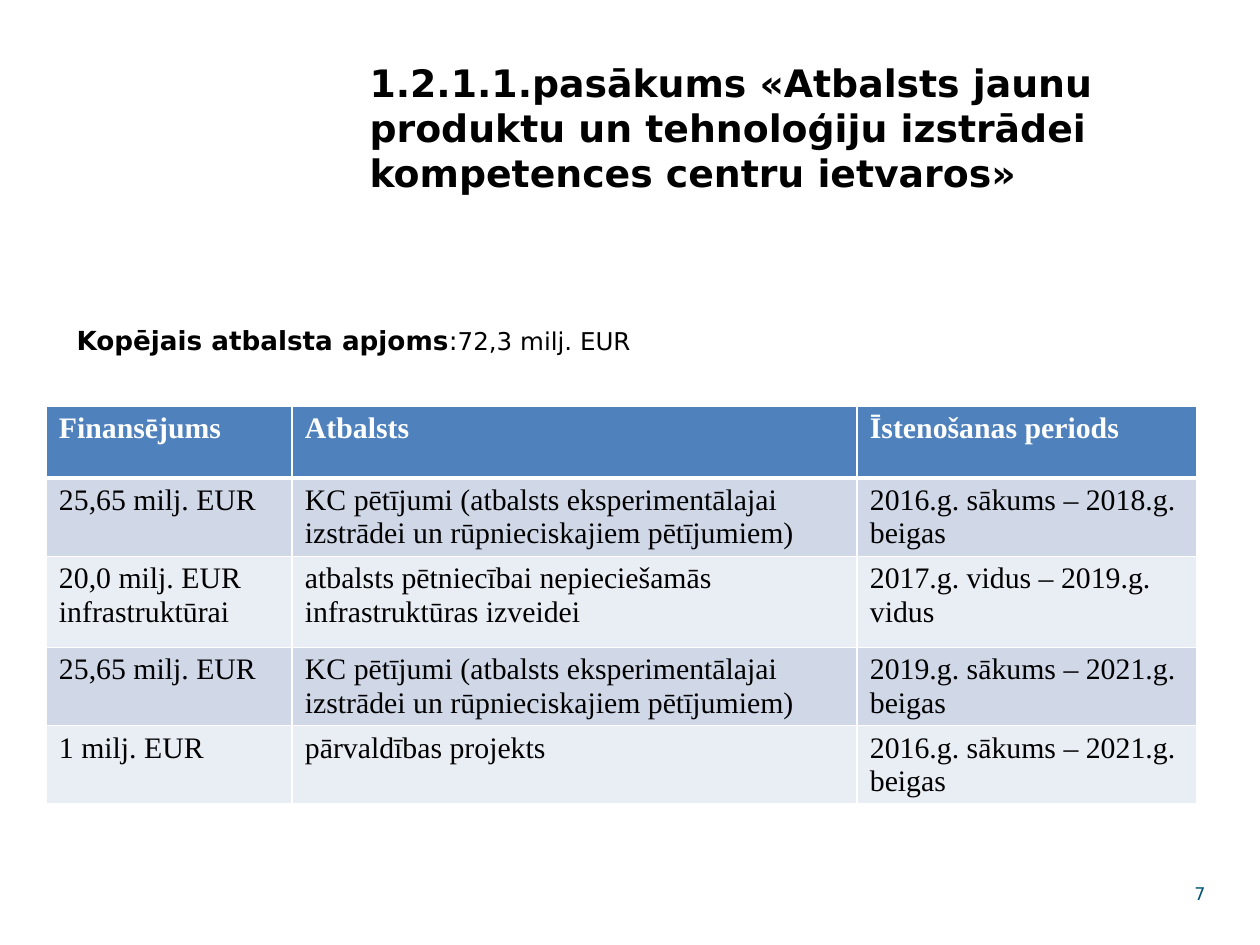
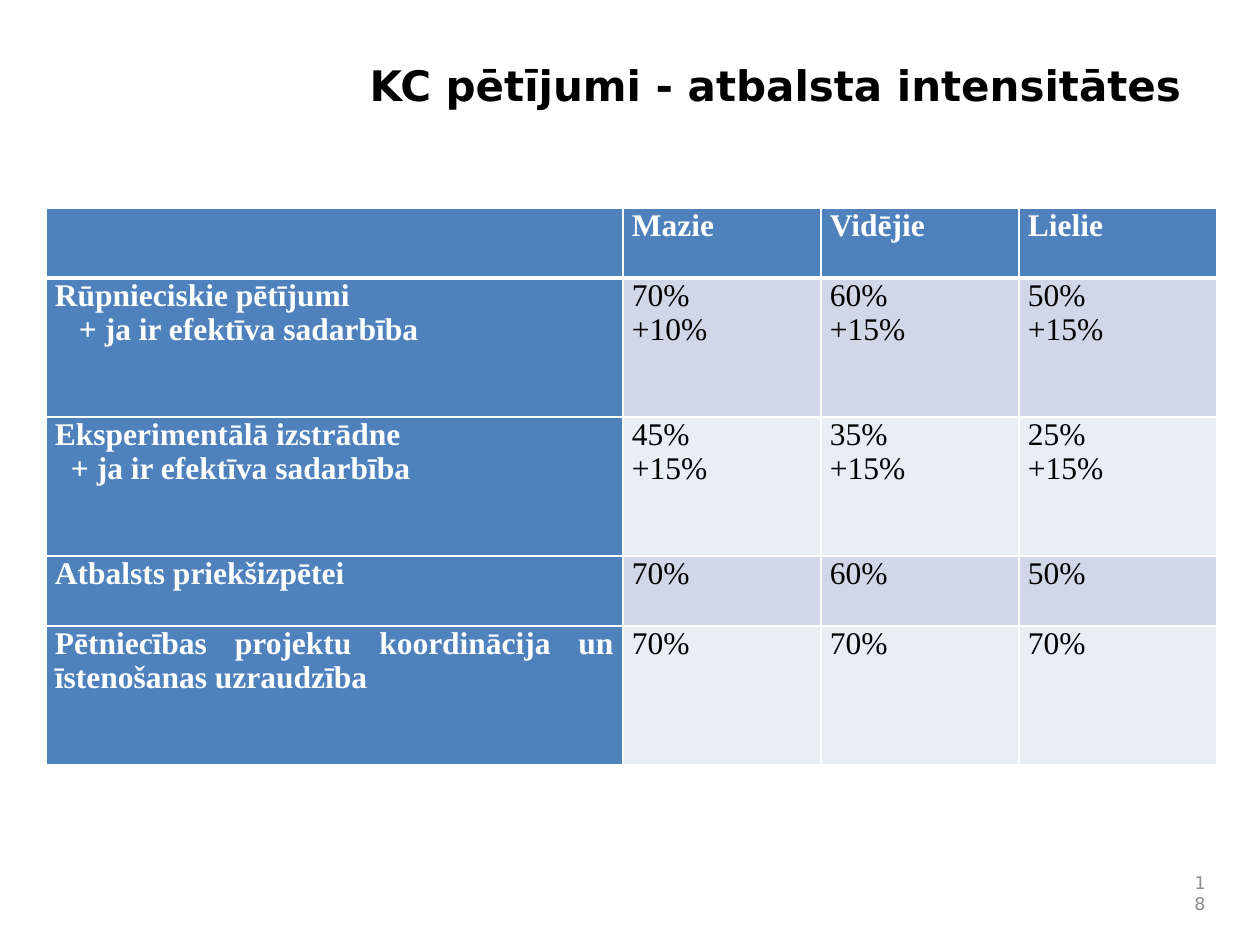
from lxml.etree import SubElement
from pptx import Presentation
from pptx.dml.color import RGBColor
from pptx.enum.text import MSO_ANCHOR as Anchor, MSO_AUTO_SIZE as AutoSize, PP_ALIGN as Align
from pptx.oxml.ns import qn
from pptx.util import Emu, Pt

PX = 914400 // 126
SANS = "DejaVu Sans"
SERIF = "Times New Roman"
BLACK = RGBColor(0x00, 0x00, 0x00)
WHITE = RGBColor(0xFF, 0xFF, 0xFF)
BLUE = RGBColor(0x4F, 0x81, 0xBD)
BAND_DARK = RGBColor(0xD0, 0xD8, 0xE8)
BAND_LIGHT = RGBColor(0xE9, 0xED, 0xF4)
TEAL = RGBColor(0x00, 0x53, 0x74)
GREY = RGBColor(0x8C, 0x8C, 0x8C)

FUNDING = [
    ["Finansējums", "Atbalsts", "Īstenošanas periods"],
    ["25,65 milj. EUR",
     "KC pētījumi (atbalsts eksperimentālajai izstrādei un rūpnieciskajiem pētījumiem)",
     "2016.g. sākums – 2018.g. beigas"],
    ["20,0 milj. EUR infrastruktūrai",
     "atbalsts pētniecībai nepieciešamās infrastruktūras izveidei",
     "2017.g. vidus – 2019.g. vidus"],
    ["25,65 milj. EUR",
     "KC pētījumi (atbalsts eksperimentālajai izstrādei un rūpnieciskajiem pētījumiem)",
     "2019.g. sākums – 2021.g. beigas"],
    ["1 milj. EUR", "pārvaldības projekts", "2016.g. sākums – 2021.g. beigas"],
]
INTENSITIES = [
    ["", "Mazie", "Vidējie", "Lielie"],
    ["Rūpnieciskie pētījumi\n+ ja ir efektīva sadarbība", "70%\n+10%", "60%\n+15%", "50%\n+15%"],
    ["Eksperimentālā izstrādne\n+ ja ir efektīva sadarbība", "45%\n+15%", "35%\n+15%", "25%\n+15%"],
    ["Atbalsts priekšizpētei", "70%", "60%", "50%"],
    ["Pētniecības projektu koordinācija un īstenošanas uzraudzība", "70%", "70%", "70%"],
]


def px(length):
    """Turn px into EMU."""
    return Emu(length * PX)


def write(paragraph, text, size, font=SANS, color=BLACK, bold=False, align=Align.LEFT):
    """Add a formatted run to a paragraph."""
    paragraph.alignment = align
    run = paragraph.add_run()
    run.text = text
    run.font.size = Pt(size)
    run.font.name = font
    run.font.bold = bold
    run.font.color.rgb = color


def indent(paragraph, left):
    """Set the left margin of a paragraph without a hanging indent."""
    properties = paragraph._p.get_or_add_pPr()
    properties.set("marL", str(px(left)))
    properties.set("indent", "0")
    return properties


def place(shape, left, top, width, height, anchor=Anchor.TOP):
    """Position a text shape and return its frame."""
    shape.left, shape.top, shape.width, shape.height = map(px, (left, top, width, height))
    frame = shape.text_frame
    frame.word_wrap = True
    frame.auto_size = AutoSize.NONE
    frame.vertical_anchor = anchor
    return frame


def add_title(slide, text, size):
    """Fill the title placeholder."""
    frame = place(slide.shapes.title, 357, 53, 840, 142)
    write(frame.paragraphs[0], text, size, bold=True)


def add_total(slide, label, amount):
    """Fill the body placeholder with the total support."""
    frame = place(slide.placeholders[1], 64, 253, 1153, 153)
    frame.margin_top = px(71)
    total = frame.paragraphs[0]
    SubElement(indent(total, 0), qn("a:buNone"))
    total.space_before = Pt(0)
    write(total, label, 15, bold=True, align=Align.JUSTIFY)
    write(total, ":", 15, align=Align.JUSTIFY)
    write(total, amount, 14, align=Align.JUSTIFY)


def add_page_number(slide, number, color):
    """Put the page number at the bottom right."""
    box = slide.shapes.add_textbox(0, 0, 0, 0)
    frame = place(box, 1176, 872, 42, 42, Anchor.MIDDLE)
    write(frame.paragraphs[0], number, 10, color=color, align=Align.RIGHT)


def add_borders(cell, row):
    """Draw white cell borders, thicker below the header."""
    heavy_side = {0: "lnB", 1: "lnT"}.get(row)
    properties = cell._tc.get_or_add_tcPr()
    for side in ("lnL", "lnR", "lnT", "lnB"):
        width = Pt(3 if side == heavy_side else 1)
        line = SubElement(properties, qn(f"a:{side}"), w=str(width))
        fill = SubElement(line, qn("a:solidFill"))
        SubElement(fill, qn("a:srgbClr"), val=str(WHITE))


def add_grid(slide, rows, left, top, widths, heights, size, align=Align.LEFT,
             margins=(13, 6), header_column=False, indents=None):
    """Add a banded table with a header row and optional header column."""
    table = slide.shapes.add_table(len(rows), len(widths), px(left), px(top),
                                   px(sum(widths)), px(sum(heights))).table
    for column, width in zip(table.columns, widths):
        column.width = px(width)
    for r, (values, height) in enumerate(zip(rows, heights)):
        table.rows[r].height = px(height)
        for c, value in enumerate(values):
            cell = table.cell(r, c)
            header = r == 0 or (header_column and c == 0)
            add_borders(cell, r)
            cell.fill.solid()
            cell.fill.fore_color.rgb = BLUE if header else BAND_DARK if r % 2 else BAND_LIGHT
            cell.margin_left = cell.margin_right = px(margins[0])
            cell.margin_top = cell.margin_bottom = px(margins[1])
            for n, line in enumerate(value.split("\n") if value else []):
                frame = cell.text_frame
                paragraph = frame.add_paragraph() if n else frame.paragraphs[0]
                if n and c == 0:
                    indent(paragraph, indents[r])
                write(paragraph, line, size, SERIF, WHITE if header else BLACK, header, align)


def main():
    """Build the two slides."""
    deck = Presentation()
    deck.slide_width, deck.slide_height = px(1260), px(945)

    funding = deck.slides.add_slide(deck.slide_layouts[1])
    add_title(funding, "1.2.1.1.pasākums «Atbalsts jaunu produktu un tehnoloģiju izstrādei "
                       "kompetences centru ietvaros»", 21.6)
    add_total(funding, "Kopējais atbalsta apjoms", "72,3 milj. EUR")
    add_page_number(funding, "7", TEAL)
    add_grid(funding, FUNDING, 46, 406, [246, 565, 340], [72, 72, 91, 72, 72], 17)

    intensities = deck.slides.add_slide(deck.slide_layouts[5])
    add_title(intensities, "KC pētījumi - atbalsta intensitātes", 24)
    add_grid(intensities, INTENSITIES, 46, 208, [577] + [198] * 3, [70, 139, 139, 70, 139], 18,
             Align.JUSTIFY, margins=(9, 0), header_column=True, indents={1: 24, 2: 16})
    add_page_number(intensities, "18", GREY)

    deck.save("out.pptx")


if __name__ == "__main__":
    main()
